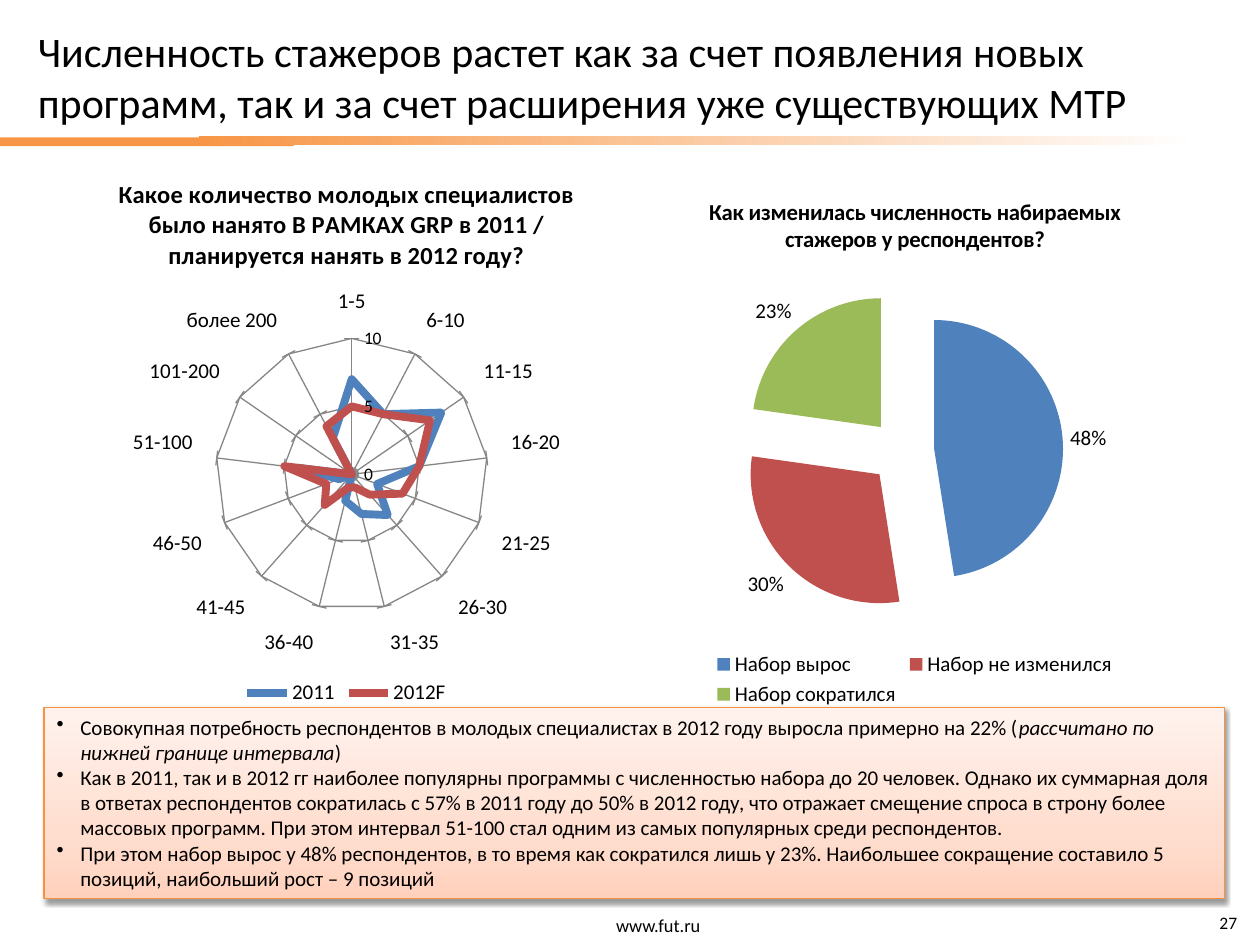
from lxml import etree
from pptx import Presentation
from pptx.chart.data import CategoryChartData
from pptx.dml.color import RGBColor
from pptx.enum.chart import XL_CHART_TYPE, XL_LABEL_POSITION, XL_LEGEND_POSITION, XL_TICK_MARK
from pptx.enum.shapes import MSO_SHAPE
from pptx.enum.text import MSO_ANCHOR, MSO_AUTO_SIZE, PP_ALIGN
from pptx.oxml.ns import qn
from pptx.util import Cm, Pt

RADAR, PIE = XL_CHART_TYPE.RADAR, XL_CHART_TYPE.PIE
OUTSIDE_END = XL_LABEL_POSITION.OUTSIDE_END
BOTTOM = XL_LEGEND_POSITION.BOTTOM
CROSS = XL_TICK_MARK.CROSS
RECTANGLE = MSO_SHAPE.RECTANGLE
TOP, MIDDLE = MSO_ANCHOR.TOP, MSO_ANCHOR.MIDDLE
NO_FIT = MSO_AUTO_SIZE.NONE
LEFT, CENTER, RIGHT = PP_ALIGN.LEFT, PP_ALIGN.CENTER, PP_ALIGN.RIGHT

FONT = "Calibri"
BLACK = RGBColor(0x00, 0x00, 0x00)
WHITE = RGBColor(0xFF, 0xFF, 0xFF)
ORANGE = RGBColor(0xF7, 0x96, 0x46)
BORDER = RGBColor(0xF6, 0x92, 0x40)
PEACH = RGBColor(0xFF, 0xD2, 0xBD)
LIGHT_PEACH = RGBColor(0xFF, 0xDE, 0xD0)
PALE_PEACH = RGBColor(0xFF, 0xF2, 0xED)
GRAY = RGBColor(0x86, 0x86, 0x86)
BLUE = RGBColor(0x4F, 0x81, 0xBD)
RED = RGBColor(0xC0, 0x50, 0x4D)
GREEN = RGBColor(0x9B, 0xBB, 0x59)

TITLE = ("Численность стажеров растет как за счет появления новых программ, "
         "так и за счет расширения уже существующих МТР")
HIRING_TITLE = ("Какое количество молодых специалистов было нанято В РАМКАХ GRP "
                "в 2011 / планируется нанять в 2012 году?")
HIRING_RANGES = ["1-5", "6-10", "11-15", "16-20", "21-25", "26-30", "31-35",
                 "36-40", "41-45", "46-50", "51-100", "101-200", "более 200"]
HIRING_SERIES = {
    "2011": [7, 5, 8, 5, 2, 4, 3, 2, 0, 1, 4, 0, 3],
    "2012F": [5, 5, 7, 5, 4, 2, 1, 1, 3, 2, 5, 0, 4],
}
CHANGE_TITLE = "Как изменилась численность набираемых стажеров у респондентов?"
CHANGE_ANSWERS = ["Набор вырос", "Набор не изменился", "Набор сократился"]
CHANGE_SERIES = {"Series 1": [48, 30, 23]}
FINDINGS = [
    [("Совокупная потребность респондентов в молодых специалистах в 2012 году "
      "выросла примерно на 22% (", False),
     ("рассчитано по нижней границе интервала", True), (")", False)],
    [("Как в 2011, так и в 2012 гг наиболее популярны программы с численностью "
      "набора до 20 человек. Однако их суммарная доля в ответах респондентов "
      "сократилась с 57% в 2011 году до 50% в 2012 году, что отражает смещение "
      "спроса в строну более массовых программ. При этом интервал 51-100 стал "
      "одним из самых популярных среди респондентов.", False)],
    [("При этом набор вырос у 48% респондентов, в то время как сократился лишь "
      "у 23%. Наибольшее сокращение составило 5 позиций, наибольший рост – "
      "9 позиций", False)],
]


def format_font(font, size, bold=False, italic=False):
    font.name, font.size = FONT, Pt(size)
    font.bold, font.italic = bold, italic
    font.color.rgb = BLACK


def write_text(frame, paragraphs, size, align=LEFT, anchor=TOP, wrap=True,
               bullet=False, margin=None):
    frame.word_wrap = wrap
    frame.auto_size = NO_FIT
    frame.vertical_anchor = anchor
    if margin is not None:
        frame.margin_left = frame.margin_right = margin
        frame.margin_top = frame.margin_bottom = margin
    for index, runs in enumerate(paragraphs):
        paragraph = frame.add_paragraph() if index else frame.paragraphs[0]
        paragraph.alignment = align
        if bullet:
            properties = paragraph._p.get_or_add_pPr()
            properties.set("marL", str(Cm(0.48)))
            properties.set("indent", str(-Cm(0.48)))
            etree.SubElement(properties, qn("a:buChar")).set("char", "•")
        for text, italic in runs:
            run = paragraph.add_run()
            run.text = text
            format_font(run.font, size, italic=italic)


def add_text_box(slide, left, top, width, height, text, **text_format):
    box = slide.shapes.add_textbox(Cm(left), Cm(top), Cm(width), Cm(height))
    write_text(box.text_frame, [[(text, False)]], **text_format)


def add_rectangle(slide, left, top, width, height, stops, angle=0):
    shape = slide.shapes.add_shape(RECTANGLE, Cm(left), Cm(top), Cm(width), Cm(height))
    shape.shadow.inherit = False
    shape.line.fill.background()
    if len(stops) == 1:
        shape.fill.solid()
        shape.fill.fore_color.rgb = stops[0][1]
        return shape
    shape.fill.gradient()
    shape.fill.gradient_angle = angle
    stop_list = shape._element.spPr.find(".//" + qn("a:gsLst"))
    for stop in list(stop_list):
        stop_list.remove(stop)
    for position, color in stops:
        stop = etree.SubElement(stop_list, qn("a:gs"), pos=str(position * 1000))
        etree.SubElement(stop, qn("a:srgbClr"), val=str(color))
    return shape


def add_shadow(shape):
    effects = shape._element.spPr.find(qn("a:effectLst"))
    shadow = etree.SubElement(effects, qn("a:outerShdw"), blurRad=str(Pt(3.1)),
                              dist=str(Pt(1.6)), dir="5400000", rotWithShape="0")
    color = etree.SubElement(shadow, qn("a:srgbClr"), val=str(BLACK))
    etree.SubElement(color, qn("a:alpha"), val="38000")


def add_chart(slide, kind, left, top, width, height, categories, series, title, title_size):
    data = CategoryChartData()
    data.categories = categories
    for name, values in series.items():
        data.add_series(name, values)
    chart = slide.shapes.add_chart(kind, Cm(left), Cm(top), Cm(width), Cm(height), data).chart
    format_font(chart.font, 10)
    chart.has_title = True
    chart.chart_title.include_in_layout = False
    paragraph = chart.chart_title.text_frame.paragraphs[0]
    run = paragraph.add_run()
    run.text = title
    format_font(run.font, title_size, bold=True)
    chart.has_legend = True
    chart.legend.position = BOTTOM
    chart.legend.include_in_layout = False
    format_font(chart.legend.font, 12)
    return chart


def format_radar(chart):
    for axis, size in ((chart.category_axis, 12), (chart.value_axis, 10)):
        axis.has_major_gridlines = True
        axis.major_tick_mark = CROSS
        format_font(axis.tick_labels.font, size)
        for line in (axis.format.line, axis.major_gridlines.format.line):
            line.color.rgb = GRAY
            line.width = Pt(0.75)
    chart.value_axis.minimum_scale = 0
    chart.value_axis.maximum_scale = 10
    chart.value_axis.major_unit = 5
    for series, color in zip(chart.plots[0].series, (BLUE, RED)):
        series.smooth = False
        series.format.line.color.rgb = color
        series.format.line.width = Pt(4.5)


def format_pie(chart):
    plot = chart.plots[0]
    plot.vary_by_categories = True
    series = plot.series[0]
    for index, color in enumerate((BLUE, RED, GREEN)):
        fill = series.points[index].format.fill
        fill.solid()
        fill.fore_color.rgb = color
    for point in series._element.findall(qn("c:dPt")):
        explosion = etree.Element(qn("c:explosion"), val="25")
        point.find(qn("c:spPr")).addprevious(explosion)
    plot.has_data_labels = True
    labels = plot.data_labels
    labels.show_value = False
    labels.show_percentage = True
    labels.number_format, labels.number_format_is_linked = "0%", False
    labels.position = OUTSIDE_END
    format_font(labels.font, 12)


def main():
    presentation = Presentation()
    presentation.slide_width, presentation.slide_height = Cm(25.4), Cm(19.05)
    slide = presentation.slides.add_slide(presentation.slide_layouts[5])

    title = slide.shapes.title
    title.left, title.top, title.width, title.height = Cm(0.51), Cm(0.33), Cm(24.3), Cm(2.41)
    write_text(title.text_frame, [[(TITLE, False)]], size=24, anchor=MIDDLE)

    add_text_box(slide, 12.09, 18.31, 2.36, 0.74, "www.fut.ru",
                 size=10.5, align=CENTER, wrap=False)
    add_text_box(slide, 24.08, 18.39, 0.86, 0.46, "27", size=10, align=RIGHT, margin=0)
    add_rectangle(slide, 0, 2.77, 5.92, 0.18, [(0, ORANGE)])
    add_rectangle(slide, 4.01, 2.74, 20.12, 0.18, [(0, ORANGE), (100, WHITE)])

    format_radar(add_chart(slide, RADAR, 0.89, 3.12, 12.19, 11.2,
                           HIRING_RANGES, HIRING_SERIES, HIRING_TITLE, 14))

    findings = add_rectangle(slide, 0.89, 14.27, 23.8, 3.84,
                             [(0, PEACH), (35, LIGHT_PEACH), (100, PALE_PEACH)], angle=90)
    findings.line.color.rgb = BORDER
    findings.line.width = Pt(0.75)
    add_shadow(findings)
    write_text(findings.text_frame, FINDINGS, size=12, bullet=True)

    format_pie(add_chart(slide, PIE, 12.09, 3.53, 12.7, 10.82,
                         CHANGE_ANSWERS, CHANGE_SERIES, CHANGE_TITLE, 13))
    presentation.save("out.pptx")


if __name__ == "__main__":
    main()
